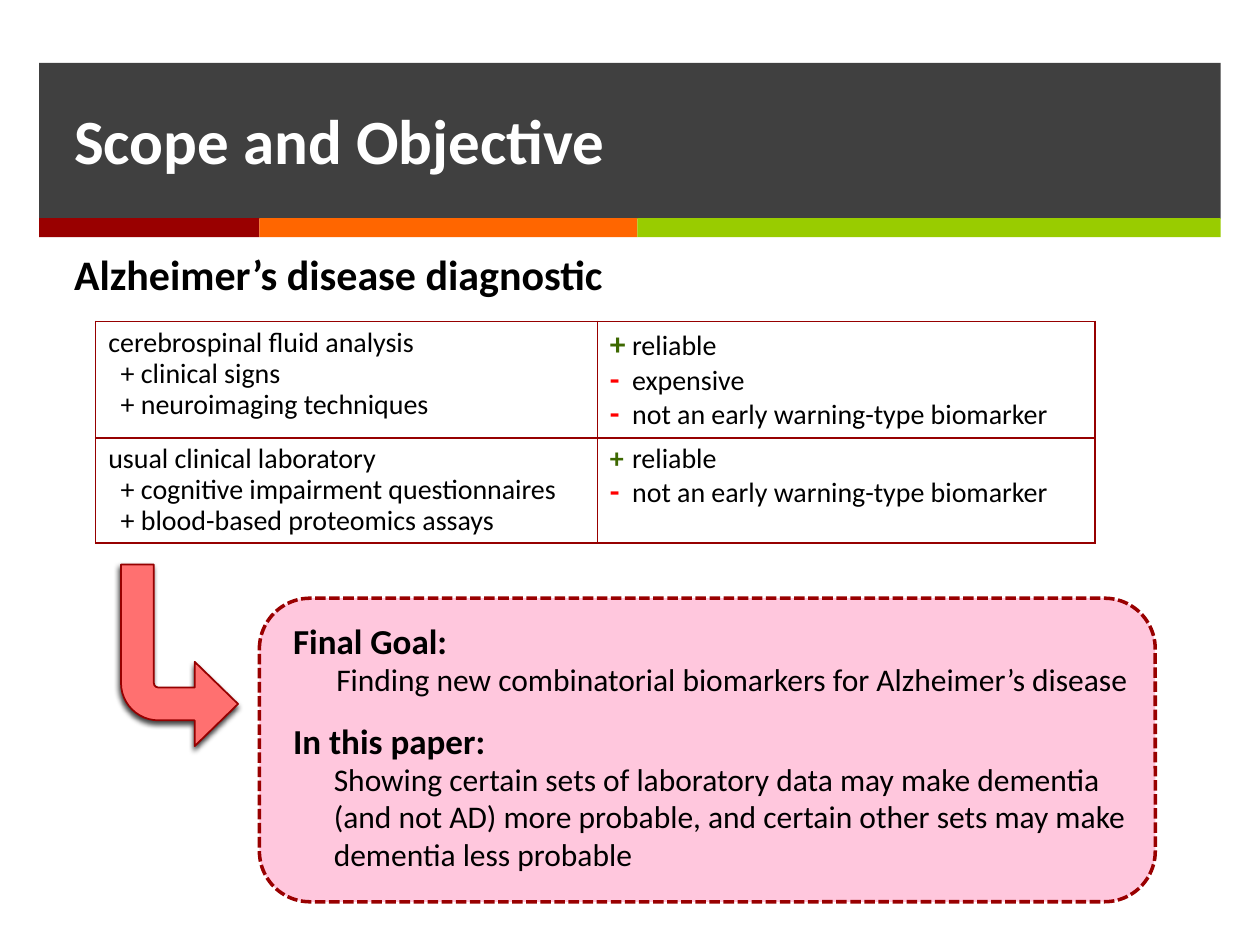
from lxml.etree import SubElement
from pptx import Presentation
from pptx.dml.color import RGBColor as RGB
from pptx.enum.dml import MSO_LINE
from pptx.enum.shapes import MSO_SHAPE as SHAPE
from pptx.enum.text import MSO_ANCHOR, MSO_AUTO_SIZE, PP_ALIGN
from pptx.oxml import parse_xml
from pptx.oxml.ns import nsdecls, qn
from pptx.util import Cm, Pt

FONT = "Calibri"
COLORS = {
    "bar": "404040", "red": "990000", "orange": "FF6600", "lime": "99CC00",
    "border": "960000", "panel": "FFC7DD", "arrow": "FF7070",
    "plus": "3D6801", "minus": "FF0000", "text": "000000", "white": "FFFFFF",
}

TITLE = "Scope and Objective"
HEADING = "Alzheimer’s disease diagnostic"
STRIPES = [("red", 4.44), ("orange", 7.62), ("lime", 11.76)]

# Each row: method lines, then (sign, sign size, remark)
METHODS = [
    (["cerebrospinal fluid analysis", "+ clinical signs",
      "+ neuroimaging techniques"],
     [("+", 18, "reliable"), ("-", 18, "expensive"),
      ("-", 18, "not an early warning-type biomarker")]),
    (["usual clinical laboratory", "+ cognitive impairment questionnaires",
      "+ blood-based proteomics assays"],
     [("+", 16, "reliable"),
      ("-", 18, "not an early warning-type biomarker")]),
]
COL_WIDTHS = [10.11, 10.03]
ROW_HEIGHTS = [2.31, 2.08]

# Box in cm, text, size, bold, line spacing
GOALS = [
    ((6.53, 13.03, 18.36, 1.14),
     "Finding new combinatorial biomarkers for Alzheimer’s disease",
     18, False, 1.2),
    ((5.66, 12.19, 3.73, 1.24), "Final Goal:", 20, True, 1.2),
    ((6.48, 15.19, 16.94, 2.64),
     "Showing certain sets of laboratory data may make dementia (and not AD) "
     "more probable, and certain other sets may make dementia less probable",
     18, False, 1.0),
    ((5.66, 14.22, 5.31, 1.24), "In this paper:", 20, True, 1.2),
]


def color(name):
    return RGB.from_string(COLORS[name])


def cm(*values):
    return [Cm(v) for v in values]


def add_run(p, text, size, bold=False, ink="text"):
    r = p.add_run()
    r.text = text
    r.font.name, r.font.size, r.font.bold = FONT, Pt(size), bold
    r.font.color.rgb = color(ink)


def set_indent(p, left, first=0):
    pPr = p._p.get_or_add_pPr()
    pPr.set("marL", str(Cm(left)))
    pPr.set("indent", str(Cm(first)))
    return pPr


def fill_line(tf, text, size, bold, spacing, ink="text"):
    """Write one left-aligned paragraph into a text frame."""
    tf.word_wrap = True
    tf.auto_size = MSO_AUTO_SIZE.NONE
    p = tf.paragraphs[0]
    p.alignment, p.line_spacing, p.space_before = PP_ALIGN.LEFT, spacing, Pt(0)
    add_run(p, text, size, bold, ink)
    return p


def add_shape(s, kind, box, fill, line=None, width=1):
    sp = s.shapes.add_shape(kind, *cm(*box))
    sp.shadow.inherit = False
    sp.fill.solid()
    sp.fill.fore_color.rgb = color(fill)
    if line:
        sp.line.color.rgb = color(line)
        sp.line.width = Pt(width)
    else:
        sp.line.fill.background()
    return sp


def place(sp, *box):
    sp.left, sp.top, sp.width, sp.height = cm(*box)


def add_header(s):
    title, body = s.shapes.title, s.placeholders[1]
    place(title, 1.24, 1.9, 18.36, 1.8)
    title.text_frame.vertical_anchor = MSO_ANCHOR.MIDDLE
    fill_line(title.text_frame, TITLE, 36, True, 1.0, "white")

    place(body, 1.24, 5, 15.52, 1.19)
    p = fill_line(body.text_frame, HEADING, 24, True, 0.9)
    SubElement(set_indent(p, 0), qn("a:buNone"))

    x = 0.79
    bars = [add_shape(s, SHAPE.RECTANGLE, (x, 1.27, 23.82, 3.14), "bar")]
    for name, width in STRIPES:
        bars.append(add_shape(s, SHAPE.RECTANGLE, (x, 4.4, width, 0.38), name))
        x += width
    for bar in bars:  # bars go behind the title
        title._element.addprevious(bar._element)


def set_borders(cell, col):
    inner = "R" if col == 0 else "L"
    tcPr = cell._tc.get_or_add_tcPr()
    for i, side in enumerate("LRTB"):
        ink = COLORS["red" if side == inner else "border"]
        tcPr.insert(i, parse_xml(
            f'<a:ln{side} {nsdecls("a")} w="{Pt(1)}"><a:solidFill>'
            f'<a:srgbClr val="{ink}"/></a:solidFill></a:ln{side}>'))


def next_paragraph(tf, i):
    p = tf.add_paragraph() if i else tf.paragraphs[0]
    p.line_spacing = 0.9
    return p


def add_methods(s):
    frame = s.shapes.add_table(
        len(METHODS), 2,
        *cm(1.93, 6.48, sum(COL_WIDTHS), sum(ROW_HEIGHTS)))
    table = frame.table
    table.first_row = table.horz_banding = False
    for col, width in zip(table.columns, COL_WIDTHS):
        col.width = Cm(width)
    for row, height, (lines, remarks) in zip(table.rows, ROW_HEIGHTS, METHODS):
        row.height = Cm(height)
        for c, cell in enumerate(row.cells):
            cell.fill.background()
            set_borders(cell, c)
        left, right = (cell.text_frame for cell in row.cells)
        for i, line in enumerate(lines):
            p = next_paragraph(left, i)
            set_indent(p, 0.25 if i else 0)
            add_run(p, line, 16)
        for i, (sign, size, remark) in enumerate(remarks):
            p = next_paragraph(right, i)
            set_indent(p, 0.45, -0.45)
            add_run(p, sign, size, True, "plus" if sign == "+" else "minus")
            add_run(p, "\t" + remark, 16)


def add_goals(s):
    panel = add_shape(s, SHAPE.ROUNDED_RECTANGLE, (5.23, 12.06, 18.06, 6.12),
                      "panel", "red", 2)
    panel.line.dash_style = MSO_LINE.SQUARE_DOT
    for box, *line in GOALS:
        fill_line(s.shapes.add_textbox(*cm(*box)).text_frame, *line)


def add_arrow(s):
    arrow = add_shape(s, SHAPE.BENT_ARROW, (2.44, 11.38, 2.36, 3.66),
                      "arrow", "border")
    for i, value in enumerate((0.28, 0.36, 0.37, 0.32)):
        arrow.adjustments[i] = value
    arrow.rotation = 180
    spPr = arrow._element.spPr
    spPr.find(qn("a:xfrm")).set("flipH", "1")
    spPr.find(qn("a:effectLst")).append(parse_xml(
        f'<a:outerShdw {nsdecls("a")} blurRad="{Pt(3)}" dist="{Pt(2)}" '
        f'dir="{110 * 60000}" rotWithShape="0"><a:srgbClr val="000000">'
        '<a:alpha val="75000"/></a:srgbClr></a:outerShdw>'))


def main():
    prs = Presentation()
    prs.slide_width, prs.slide_height = cm(25.4, 19.05)
    s = prs.slides.add_slide(prs.slide_layouts[1])
    add_header(s)
    add_methods(s)
    add_goals(s)
    add_arrow(s)
    prs.save("out.pptx")


if __name__ == "__main__":
    main()
